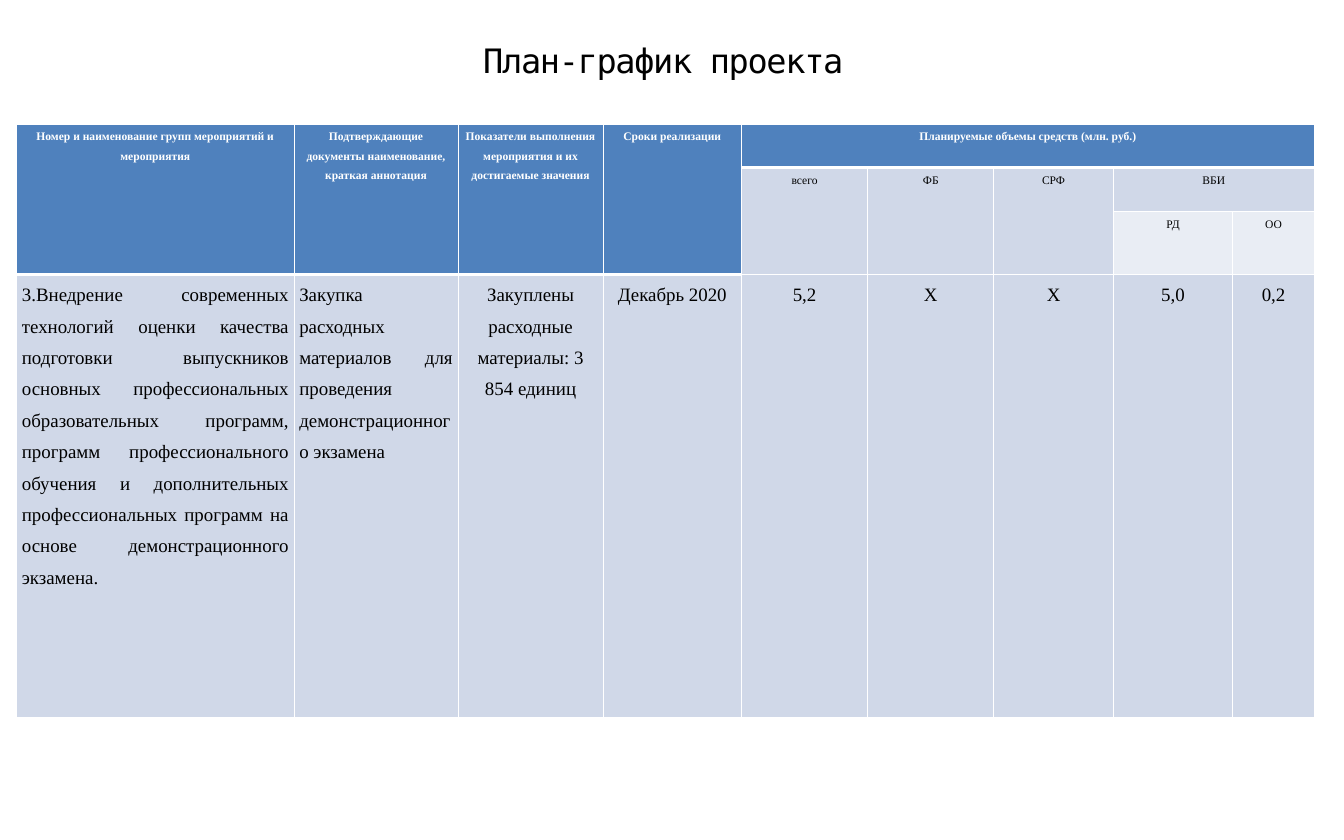
from pptx import Presentation
from pptx.dml.color import RGBColor as Rgb
from pptx.enum.text import MSO_ANCHOR as Anchor, MSO_AUTO_SIZE as Fit, PP_ALIGN as Align
from pptx.util import Inches, Pt
from lxml.etree import SubElement as Sub
from pptx.oxml.ns import qn

HUES = {"head": "4F81BD", "band": "D0D8E8", "pale": "E9EDF4",
        "white": "FFFFFF", "black": "000000"}
SERIF = "Times New Roman"
MONO = "DejaVu Sans Mono"
COLS = [3.67, 2.17, 1.92, 1.83, 1.67, 1.67, 1.58, 1.58, 1.08]
ROWS = [0.58, 0.58, 0.83, 5.86]

HEADS = [
    (0, 0, 3, 1, "Номер и наименование групп мероприятий и мероприятия"),
    (0, 1, 3, 1, "Подтверждающие документы наименование, краткая аннотация"),
    (0, 2, 3, 1, "Показатели выполнения мероприятия и их достигаемые значения"),
    (0, 3, 3, 1, "Сроки реализации"),
    (0, 4, 1, 5, "Планируемые объемы средств (млн. руб.)"),
]
FUNDS = [
    (1, 4, 2, 1, "всего"),
    (1, 5, 2, 1, "ФБ"),
    (1, 6, 2, 1, "СРФ"),
    (1, 7, 1, 2, "ВБИ"),
]
PARTS = [(2, 7, 1, 1, "РД"), (2, 8, 1, 1, "ОО")]
TASK = [
    "3.Внедрение современных технологий оценки качества подготовки "
    "выпускников основных профессиональных образовательных программ, "
    "программ профессионального обучения и дополнительных профессиональных "
    "программ на основе демонстрационного экзамена.",
    "Закупка расходных материалов для проведения демонстрационного экзамена",
    "Закуплены расходные материалы: 3 854 единиц",
    "Декабрь 2020", "5,2", "X", "X", "5,0", "0,2",
]


def add_run(para, text, font, size, hue, bold=False):
    run = para.add_run()
    run.text = text
    run.font.name = font
    run.font.size = Pt(size)
    run.font.bold = bold
    run.font.color.rgb = Rgb.from_string(HUES[hue])
    return run


def add_title(slide, left, top, width, height):
    title = slide.shapes.title
    title.left, title.top = Inches(left), Inches(top)
    title.width, title.height = Inches(width), Inches(height)
    frame = title.text_frame
    frame.word_wrap = True
    frame.auto_size = Fit.SHAPE_TO_FIT_TEXT
    frame.vertical_anchor = Anchor.TOP
    frame.margin_left = frame.margin_right = frame.margin_bottom = 0
    frame.margin_top = Inches(0.08)
    para = frame.paragraphs[0]
    para.alignment = Align.CENTER
    para.line_spacing = Pt(50)
    para.space_before = Pt(0)
    run = add_run(para, "План-график проекта", MONO, 32, "black")
    run.font._element.set("spc", "-130")


def style_cell(cell, fill, base):
    props = cell._tc.get_or_add_tcPr()
    for side in ("lnL", "lnR", "lnT", "lnB"):
        points = base if side == "lnB" else 1
        line = Sub(props, qn(f"a:{side}"), w=str(Pt(points)))
        paint = Sub(line, qn("a:solidFill"))
        Sub(paint, qn("a:srgbClr"), val=HUES["white"])
    cell.fill.solid()
    cell.fill.fore_color.rgb = Rgb.from_string(HUES[fill])


def fill_cells(grid, items, fill, size=11, hue="black", bold=False, base=1):
    for row, col, down, wide, text in items:
        cell = grid.cell(row, col)
        if down * wide > 1:
            cell.merge(grid.cell(row + down - 1, col + wide - 1))
        for y in range(row, row + down):
            for x in range(col, col + wide):
                style_cell(grid.cell(y, x), fill, base)
        cell.margin_left = cell.margin_right = Inches(0.07)
        cell.margin_top = cell.margin_bottom = 0
        cell.vertical_anchor = Anchor.TOP
        para = cell.text_frame.paragraphs[0]
        para.alignment = Align.JUSTIFY if row == 3 and col < 2 else Align.CENTER
        para.line_spacing = 1.5
        add_run(para, text, SERIF, size, hue, bold)


def add_plan(slide, left, top):
    grid = slide.shapes.add_table(
        len(ROWS), len(COLS), Inches(left), Inches(top),
        Inches(sum(COLS)), Inches(sum(ROWS))).table
    for col, width in zip(grid.columns, COLS):
        col.width = Inches(width)
    for row, height in zip(grid.rows, ROWS):
        row.height = Inches(height)
    fill_cells(grid, HEADS, "head", hue="white", bold=True, base=3)
    fill_cells(grid, FUNDS, "band")
    fill_cells(grid, PARTS, "pale")
    task = [(3, col, 1, 1, text) for col, text in enumerate(TASK)]
    fill_cells(grid, task, "band", size=18)


def main():
    deck = Presentation()
    deck.slide_width, deck.slide_height = Inches(17.78), Inches(11.11)
    slide = deck.slides.add_slide(deck.slide_layouts[5])
    add_title(slide, 0.49, 0.29, 16.57, 0.71)
    add_plan(slide, 0.22, 1.64)
    deck.save("out.pptx")


if __name__ == "__main__":
    main()
